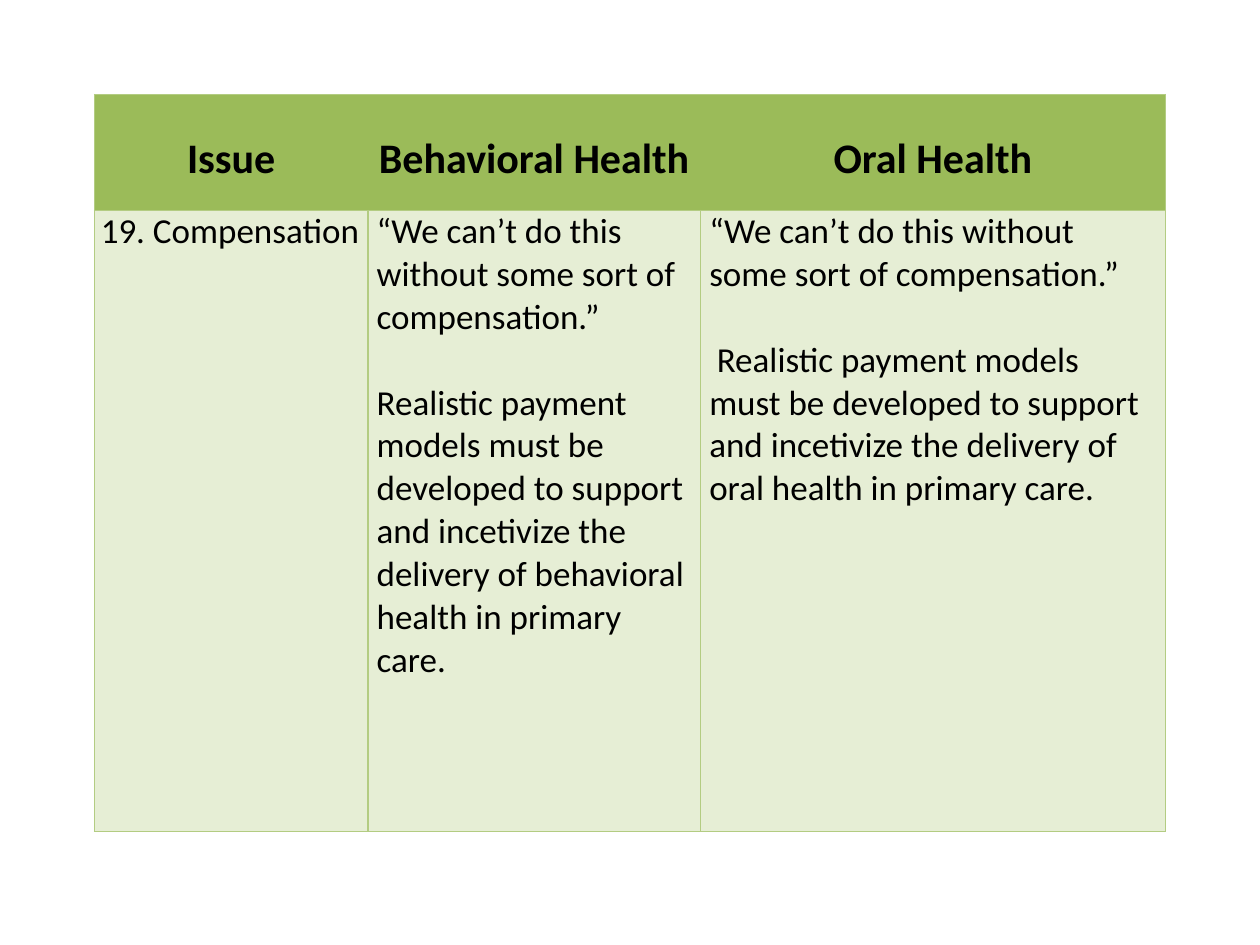
import pptx
import pptx.dml.color
import pptx.enum.text
import pptx.oxml
import pptx.oxml.ns
import pptx.util
from pptx.util import Inches

FONT = "Calibri"
HEADER_FILL = "9BBB59"
BODY_FILL = "E6EED5"
BORDER = "B3CC82"
NO_GRID_STYLE = "{2D5ABB26-0587-4C30-8999-92F81FD0307C}"

COLUMN_WIDTHS = [2.17, 2.64, 3.69]
ROW_HEIGHTS = [0.92, 4.93]
HEADINGS = ["Issue", "Behavioral Health", "Oral Health"]
QUOTE = "“We can’t do this without some sort of compensation.”"
MODELS = ("Realistic payment models must be developed to support and "
          "incetivize the delivery of {} health in primary care.")
ISSUE_ROW = [
    ["19. Compensation"],
    [QUOTE, MODELS.format("behavioral")],
    [QUOTE, MODELS.format("oral")],
]


def color(hex_value):
    return pptx.dml.color.RGBColor.from_string(hex_value)


def set_borders(cell, sides):
    """Draw 1 pt lines on the given sides, named in schema order from L, R, T, B."""
    properties = cell._tc.get_or_add_tcPr()
    for index, side in enumerate(sides):
        line = pptx.oxml.parse_xml(
            f'<a:ln{side} {pptx.oxml.ns.nsdecls("a")} w="12700"><a:solidFill>'
            f'<a:srgbClr val="{BORDER}"/></a:solidFill></a:ln{side}>')
        properties.insert(index, line)


def format_cell(cell, fill, side_margin, top_margin=0):
    cell.fill.solid()
    cell.fill.fore_color.rgb = color(fill)
    cell.margin_left = cell.margin_right = Inches(side_margin)
    cell.margin_top = Inches(top_margin)
    cell.margin_bottom = 0
    cell.vertical_anchor = pptx.enum.text.MSO_ANCHOR.TOP


def add_text(paragraph, text, size, bold=False):
    run = paragraph.add_run()
    run.text = text
    run.font.name = FONT
    run.font.size = pptx.util.Pt(size)
    run.font.bold = bold
    run.font.color.rgb = color("000000")


def fill_header(table):
    for column, heading in enumerate(HEADINGS):
        cell = table.cell(0, column)
        format_cell(cell, HEADER_FILL, 0.05, top_margin=0.31)
        paragraph = cell.text_frame.paragraphs[0]
        paragraph.alignment = pptx.enum.text.PP_ALIGN.CENTER
        add_text(paragraph, heading, 24, bold=True)


def fill_issue(table):
    for column, statements in enumerate(ISSUE_ROW):
        cell = table.cell(1, column)
        format_cell(cell, BODY_FILL, 0.05 if column == 0 else 0.07)
        frame = cell.text_frame
        for index, statement in enumerate(statements):
            paragraph = frame.add_paragraph() if index else frame.paragraphs[0]
            if index:
                paragraph.space_before = pptx.util.Pt(24.4)
            add_text(paragraph, statement, 20)
    oral_models = table.cell(1, 2).text_frame.paragraphs[1]
    oral_models._p.get_or_add_pPr().set("indent", str(Inches(0.06)))


def add_issue_table(slide, left, top):
    frame = slide.shapes.add_table(
        len(ROW_HEIGHTS), len(COLUMN_WIDTHS), left, top,
        Inches(sum(COLUMN_WIDTHS)), Inches(sum(ROW_HEIGHTS)))
    table = frame.table
    table.horz_banding = False
    table._tbl.tblPr.find(pptx.oxml.ns.qn("a:tableStyleId")).text = NO_GRID_STYLE
    for column, width in zip(table.columns, COLUMN_WIDTHS):
        column.width = Inches(width)
    for row, height in zip(table.rows, ROW_HEIGHTS):
        row.height = Inches(height)
    fill_header(table)
    fill_issue(table)
    for column, sides in enumerate(["LTB", "TB", "RTB"]):
        set_borders(table.cell(0, column), sides)
    for column, sides in enumerate(["LRTB", "LTB", "RTB"]):
        set_borders(table.cell(1, column), sides)


def main():
    presentation = pptx.Presentation()
    presentation.slide_width = Inches(10)
    presentation.slide_height = Inches(7.5)
    slide = presentation.slides.add_slide(presentation.slide_layouts[6])
    add_issue_table(slide, Inches(0.75), Inches(0.75))
    presentation.save("out.pptx")


if __name__ == "__main__":
    main()
